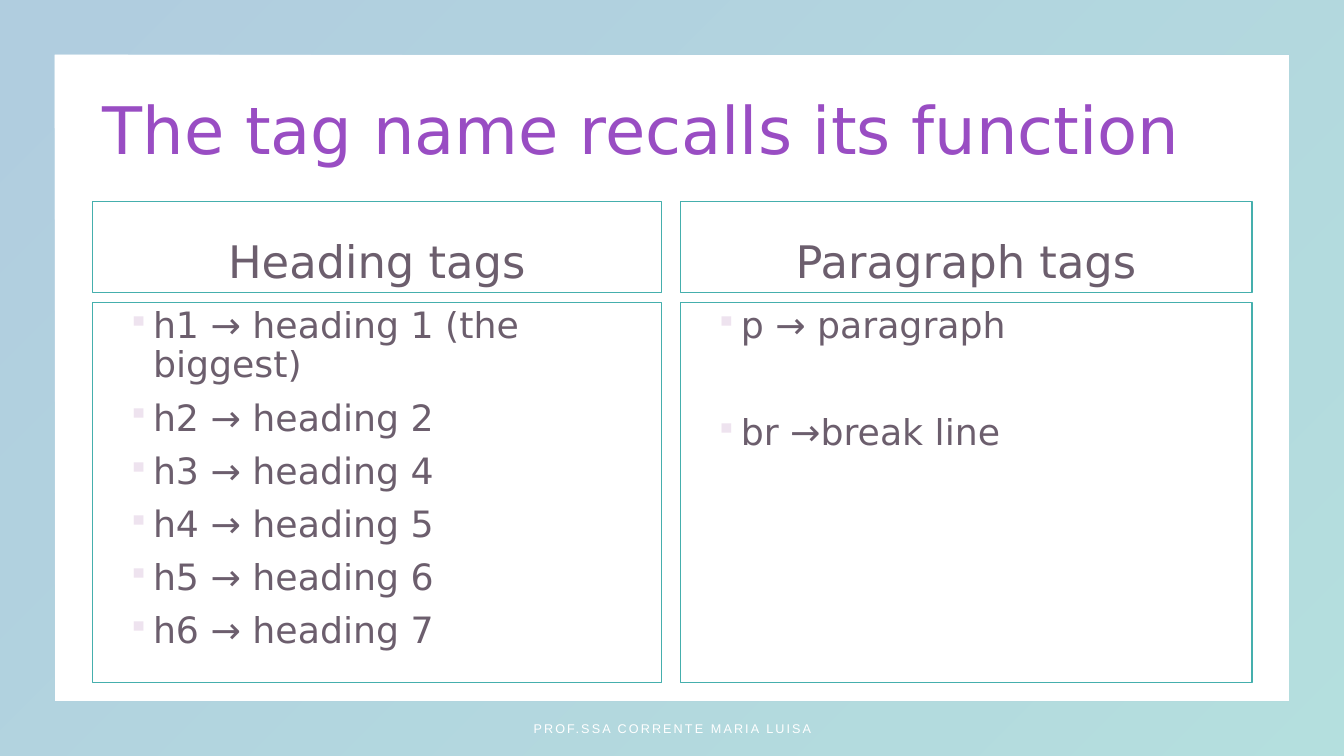
from dataclasses import dataclass

from lxml import etree
from pptx import Presentation
from pptx.dml.color import RGBColor
from pptx.enum.shapes import MSO_SHAPE
from pptx.enum.text import MSO_ANCHOR, PP_ALIGN
from pptx.oxml.ns import qn
from pptx.util import Inches, Pt

FRAME, RECTANGLE = MSO_SHAPE.FRAME, MSO_SHAPE.RECTANGLE
TOP, MIDDLE, BOTTOM = MSO_ANCHOR.TOP, MSO_ANCHOR.MIDDLE, MSO_ANCHOR.BOTTOM
LEFT, CENTER = PP_ALIGN.LEFT, PP_ALIGN.CENTER

SLIDE_WIDTH, SLIDE_HEIGHT = Inches(13.33), Inches(7.5)
BLUE, TEAL, PURPLE = "3B82B1", "45AFAD", "994DC3"
DARK, PALE, WHITE = "2E1B30", "EEE3EF", "FFFFFF"
MAIN_FONT, FOOTER_FONT = "DejaVu Sans", "Arial"
HEADER_ROW = (26.67, 12)  # top and height, percent of the slide
LIST_ROW = (40, 50.27)
ITEM_GAP, WIDE_GAP = 10, 48.5  # points before a list item


@dataclass(frozen=True)
class Area:
    """A region in percent of the slide's width and height."""
    left: float
    top: float
    width: float
    height: float

    def lengths(self) -> tuple[int, ...]:
        return (int(SLIDE_WIDTH * self.left / 100), int(SLIDE_HEIGHT * self.top / 100),
                int(SLIDE_WIDTH * self.width / 100), int(SLIDE_HEIGHT * self.height / 100))


@dataclass(frozen=True)
class TagColumn:
    left: float
    width: float
    header: str
    items: tuple[str, ...]
    gap: float


TAG_COLUMNS = (
    TagColumn(6.9, 42.3, "Heading tags",
              ("h1 → heading 1 (the biggest)", "h2 → heading 2", "h3 → heading 4",
               "h4 → heading 5", "h5 → heading 6", "h6 → heading 7"), ITEM_GAP),
    TagColumn(50.63, 42.53, "Paragraph tags",
              ("p → paragraph", "br →break line"), WIDE_GAP),
)


def color(value: str) -> RGBColor:
    return RGBColor.from_string(value)


def set_opacity(element, percent: int) -> None:
    for node in element.iter(qn("a:srgbClr")):
        etree.SubElement(node, qn("a:alpha"), val=str(percent * 1000))


def add_bullet(paragraph) -> None:
    properties = paragraph._p.get_or_add_pPr()
    properties.set("marL", str(Inches(0.5)))
    properties.set("indent", str(Inches(-0.25)))
    bullet_color = etree.SubElement(properties, qn("a:buClr"))
    etree.SubElement(bullet_color, qn("a:srgbClr"), val=PALE)
    etree.SubElement(properties, qn("a:buSzPct"), val="80000")
    etree.SubElement(properties, qn("a:buChar"), char="▪")


def write_text(shape, *lines: str, size: float, fill: str = DARK, font: str = MAIN_FONT,
               align=LEFT, anchor=MIDDLE, line_spacing: float = 1.0, gap: float = 0,
               opacity: int = 100, tracking: int = 0, bullets: bool = False) -> None:
    frame = shape.text_frame
    frame.word_wrap = True
    frame.vertical_anchor = anchor
    for index, line in enumerate(lines):
        paragraph = frame.paragraphs[0] if index == 0 else frame.add_paragraph()
        paragraph.alignment = align
        paragraph.line_spacing = line_spacing
        paragraph.space_before = Pt(gap)
        if bullets:
            add_bullet(paragraph)
        run = paragraph.add_run()
        run.text = line
        run.font.size = Pt(size)
        run.font.name = font
        run.font.color.rgb = color(fill)
        properties = run._r.get_or_add_rPr()
        if opacity < 100:
            set_opacity(properties, opacity)
        if tracking:
            properties.set("spc", str(tracking))


def add_border(slide) -> None:
    border = slide.shapes.add_shape(FRAME, *Area(0, 0, 100, 100).lengths())
    border.adjustments[0] = 0.072
    border.shadow.inherit = False
    border.line.fill.background()
    border.fill.gradient()
    border.fill.gradient_angle = 315
    for stop, value, position in zip(border.fill.gradient_stops, (BLUE, TEAL), (0, 1)):
        stop.color.rgb = color(value)
        stop.position = position
    set_opacity(border._element.spPr, 40)


def add_box(slide, area: Area):
    box = slide.shapes.add_shape(RECTANGLE, *area.lengths())
    box.shadow.inherit = False
    box.fill.background()
    box.line.color.rgb = color(TEAL)
    box.line.width = Pt(0.75)
    return box


def add_tag_column(slide, column: TagColumn) -> None:
    header_box, list_box = (add_box(slide, Area(column.left, top, column.width, height))
                            for top, height in (HEADER_ROW, LIST_ROW))
    write_text(header_box, column.header, size=32, align=CENTER, anchor=BOTTOM,
               line_spacing=1.1, gap=10, opacity=70)
    write_text(list_box, *column.items, size=25.9, anchor=TOP, line_spacing=0.9,
               gap=column.gap, opacity=70, bullets=True)


def main() -> None:
    presentation = Presentation()
    presentation.slide_width, presentation.slide_height = SLIDE_WIDTH, SLIDE_HEIGHT
    slide = presentation.slides.add_slide(presentation.slide_layouts[6])

    # Border and title
    add_border(slide)
    title = slide.shapes.add_textbox(*Area(6.9, 9.73, 86.25, 15.87).lengths())
    write_text(title, "The tag name recalls its function", size=46.8, fill=PURPLE,
               line_spacing=0.9)

    # Tag lists
    for column in TAG_COLUMNS:
        add_tag_column(slide, column)

    # Footer
    footer = slide.shapes.add_textbox(*Area(33.15, 93.73, 33.75, 5.33).lengths())
    write_text(footer, "PROF.SSA CORRENTE MARIA LUISA", size=9, fill=WHITE,
               font=FOOTER_FONT, align=CENTER, tracking=150)

    presentation.save("out.pptx")


if __name__ == "__main__":
    main()
